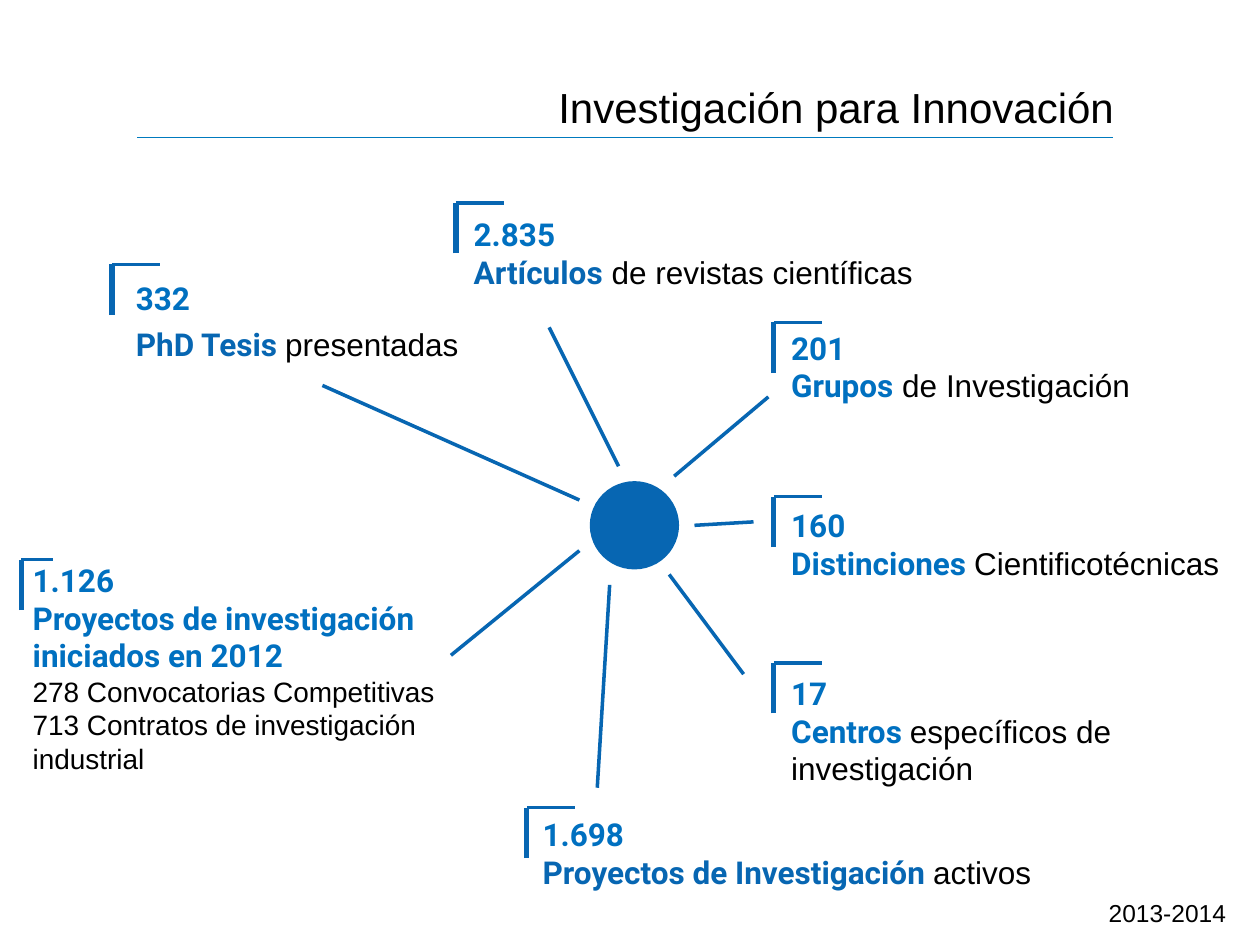
import dataclasses

import pptx
import pptx.dml.color
import pptx.enum.shapes
import pptx.enum.text
import pptx.oxml.ns
import pptx.util
from lxml import etree

Cm = pptx.util.Cm
Pt = pptx.util.Pt
RIGHT = pptx.enum.text.PP_ALIGN.RIGHT


@dataclasses.dataclass(frozen=True)
class Theme:
    blue: str = "0766B2"
    bright_blue: str = "0070C0"
    rule_blue: str = "007ABE"
    black: str = "000000"
    plain_font: str = "Arial"
    strong_font: str = "Roboto"
    title_size: int = 24
    fact_size: int = 18
    detail_size: int = 16
    footer_size: int = 14
    rule_width: float = 0.75
    line_width: float = 2
    bar_width: float = 3


def write_text(paragraph, text, *, font, size, color, bold=False):
    run = paragraph.add_run()
    run.text = text
    run.font.name = font
    run.font.size = Pt(size)
    run.font.bold = bold
    run.font.color.rgb = pptx.dml.color.RGBColor.from_string(color)


class SlideBuilder:
    def __init__(self, slide, theme):
        self.slide = slide
        self.theme = theme

    def strong(self, text, color=None):
        theme = self.theme
        return text, dict(font=theme.strong_font, size=theme.fact_size,
                          color=color or theme.bright_blue, bold=True)

    def plain(self, text, size=None):
        theme = self.theme
        return text, dict(font=theme.plain_font, size=size or theme.fact_size,
                          color=theme.black)

    def title(self, text, left, top, width, height):
        heading = self.slide.shapes.title
        heading.left, heading.top = Cm(left), Cm(top)
        heading.width, heading.height = Cm(width), Cm(height)
        frame = heading.text_frame
        frame.vertical_anchor = pptx.enum.text.MSO_ANCHOR.TOP
        frame.paragraphs[0].alignment = RIGHT
        content, style = self.plain(text, self.theme.title_size)
        write_text(frame.paragraphs[0], content, **style)

    def text(self, left, top, width, height, lines, spacing=None):
        """Each line is a list of (text, format) runs; spacing applies after the first line."""
        frame = self.slide.shapes.add_textbox(
            Cm(left), Cm(top), Cm(width), Cm(height)).text_frame
        frame.word_wrap = True
        for index, runs in enumerate(lines):
            paragraph = frame.add_paragraph() if index else frame.paragraphs[0]
            if index and spacing:
                paragraph.line_spacing = spacing
            for content, style in runs:
                write_text(paragraph, content, **style)

    def line(self, x1, y1, x2, y2, color=None, width=None):
        connector = self.slide.shapes.add_connector(
            pptx.enum.shapes.MSO_CONNECTOR.STRAIGHT, Cm(x1), Cm(y1), Cm(x2), Cm(y2))
        connector.line.color.rgb = pptx.dml.color.RGBColor.from_string(
            color or self.theme.blue)
        connector.line.width = Pt(width or self.theme.line_width)
        etree.SubElement(connector._element.spPr, pptx.oxml.ns.qn("a:effectLst"))

    def bracket(self, left, top, width=0.97, height=1.02):
        self.line(left, top, left + width, top)
        self.line(left, top + height, left, top, width=self.theme.bar_width)

    def hub(self, left, top, width, height):
        circle = self.slide.shapes.add_shape(
            pptx.enum.shapes.MSO_SHAPE.OVAL, Cm(left), Cm(top), Cm(width), Cm(height))
        circle.shadow.inherit = False
        circle.fill.solid()
        circle.fill.fore_color.rgb = pptx.dml.color.RGBColor.from_string(self.theme.blue)
        circle.line.fill.background()


def main():
    theme = Theme()
    deck = pptx.Presentation()
    deck.slide_width, deck.slide_height = Cm(25.4), Cm(19.05)
    builder = SlideBuilder(deck.slides.add_slide(deck.slide_layouts[5]), theme)
    strong, plain = builder.strong, builder.plain

    builder.line(2.77, 2.77, 22.43, 2.77, theme.rule_blue, theme.rule_width)
    builder.title("Investigación para Innovación", 8.99, 1.52, 13.72, 1.24)
    builder.hub(11.89, 9.7, 1.8, 1.78)

    spokes = [
        (9.09, 13.21, 11.68, 11.1),
        (6.5, 7.77, 11.68, 10.08),
        (12.47, 9.4, 11.07, 6.6),
        (14, 10.59, 15.19, 10.52),
        (14.99, 13.59, 13.49, 11.58),
        (13.59, 9.6, 15.49, 8),
        (12.04, 15.88, 12.29, 11.79),
    ]
    for spoke in spokes:
        builder.line(*spoke)

    # bracket corner, text area, figure, name, name colour, remainder, line spacing
    facts = [
        ((2.26, 5.33), (2.49, 5.51, 7.39, 1.93),
         "332", "PhD Tesis ", theme.blue, "presentadas", 1.2),
        ((9.19, 4.09), (9.3, 4.22, 10.21, 1.8),
         "2.835", "Artículos", theme.blue, " de revistas científicas", None),
        ((15.6, 6.5), (15.7, 6.5, 7.59, 2.57),
         "201", "Grupos", theme.bright_blue, " de Investigación", None),
        ((15.6, 10.01), (15.7, 10.08, 9.5, 2.57),
         "160", "Distinciones ", theme.bright_blue, "Cientificotécnicas", None),
        ((15.6, 13.36), (15.7, 13.46, 10.62, 2.57),
         "17", "Centros ", theme.bright_blue, "específicos de investigación", None),
        ((10.62, 16.28), (10.69, 16.31, 14.5, 1.8),
         "1.698", "Proyectos de Investigación ", theme.blue, "activos", None),
    ]
    for corner, area, figure, name, color, remainder, spacing in facts:
        builder.bracket(*corner)
        builder.text(*area, [[strong(figure)], [strong(name, color), plain(remainder)]],
                     spacing)

    builder.bracket(0.43, 11.28, width=0.64)
    builder.text(0.41, 11.18, 9.47, 4.62, [
        [strong("1.126")],
        [strong("Proyectos de investigación iniciados en 2012")],
        [plain("278 Convocatorias Competitivas", theme.detail_size)],
        [plain("713 Contratos de investigación industrial", theme.detail_size)],
    ])
    builder.text(22.1, 17.98, 3.1, 1.02, [[plain("2013-2014", theme.footer_size)]])

    deck.save("out.pptx")


if __name__ == "__main__":
    main()
